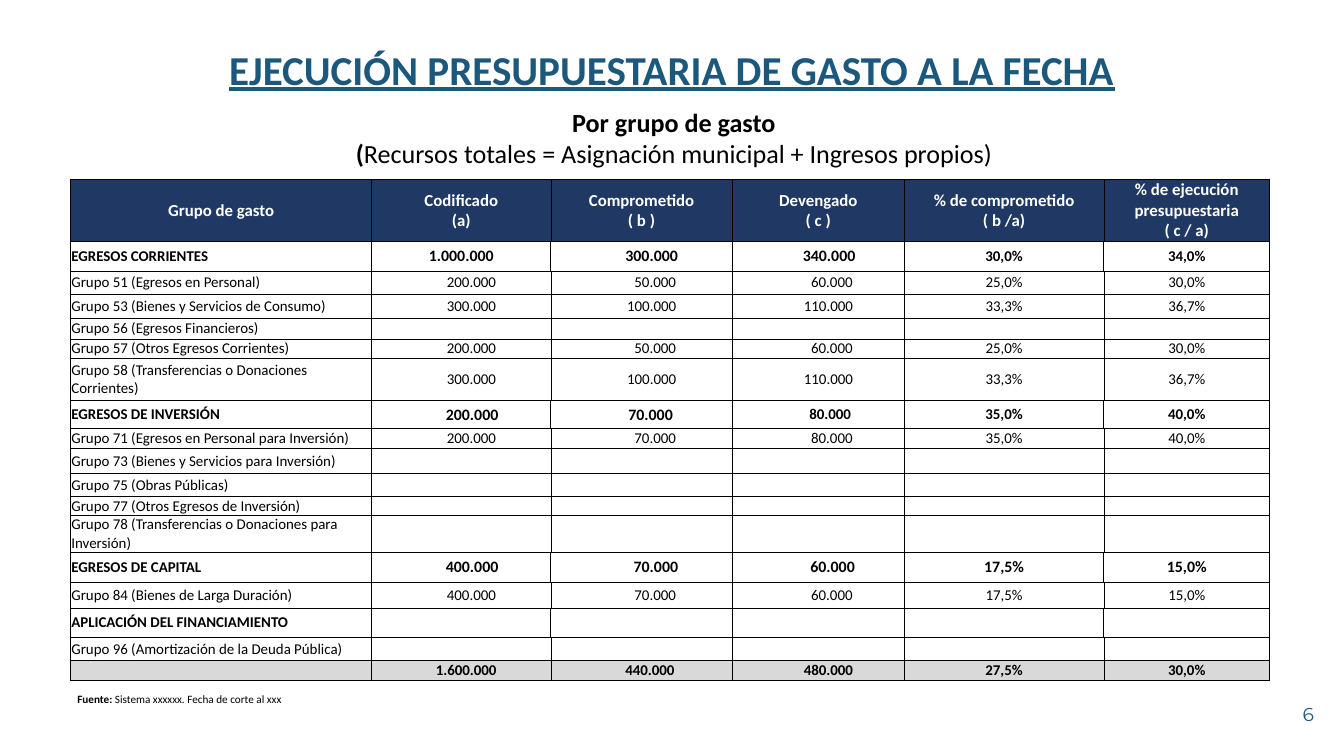
from dataclasses import dataclass

from lxml.etree import SubElement
from pptx import Presentation
from pptx.dml.color import RGBColor
from pptx.enum.text import MSO_ANCHOR, PP_ALIGN
from pptx.oxml.ns import qn
from pptx.util import Emu, Pt

PX = 9525
NAVY = RGBColor(0x1F, 0x38, 0x64)
BLUE = RGBColor(0x1B, 0x58, 0x7C)
GRAY = RGBColor(0xD9, 0xD9, 0xD9)
BLACK = RGBColor(0, 0, 0)
WHITE = RGBColor(0xFF, 0xFF, 0xFF)
INDENT_BY_LENGTH = {7: 29, 6: 39}


@dataclass
class Style:
    size: int
    color: RGBColor = BLACK
    bold: bool = False
    font: str = "Calibri"
    underline: bool = False


@dataclass
class BudgetRow:
    height: int
    label: str
    values: tuple = ("",) * 5
    kind: str = "group"
    sizes: tuple = (16,) * 5
    indents: tuple = ()


COLUMNS = (430, 256, 259, 246, 285, 237)
ROWS = (
    BudgetRow(89, "Grupo de gasto",
              ("Codificado\v(a)", "Comprometido\v( b )", "Devengado\v( c )",
               "% de comprometido\v( b /a)", "% de ejecución presupuestaria\v( c / a)"),
              "header", (18,) * 5),
    BudgetRow(42, "EGRESOS CORRIENTES", ("1.000.000", "300.000", "340.000", "30,0%", "34,0%"),
              "section", (17, 17, 17, 16, 16), (0, 29, 31)),
    BudgetRow(33, "Grupo 51 (Egresos en Personal)",
              ("200.000", "50.000", "60.000", "25,0%", "30,0%")),
    BudgetRow(34, "Grupo 53 (Bienes y Servicios de Consumo)",
              ("300.000", "100.000", "110.000", "33,3%", "36,7%")),
    BudgetRow(30, "Grupo 56 (Egresos Financieros)"),
    BudgetRow(28, "Grupo 57 (Otros Egresos Corrientes)",
              ("200.000", "50.000", "60.000", "25,0%", "30,0%")),
    BudgetRow(60, "Grupo 58 (Transferencias o Donaciones Corrientes)",
              ("300.000", "100.000", "110.000", "33,3%", "36,7%")),
    BudgetRow(40, "EGRESOS DE INVERSIÓN", ("200.000", "70.000", "80.000", "35,0%", "40,0%"),
              "section", (17, 17, 16, 16, 16), (31, 26, 34)),
    BudgetRow(29, "Grupo 71 (Egresos en Personal para Inversión)",
              ("200.000", "70.000", "80.000", "35,0%", "40,0%")),
    BudgetRow(35, "Grupo 73 (Bienes y Servicios para Inversión)"),
    BudgetRow(33, "Grupo 75 (Obras Públicas)"),
    BudgetRow(27, "Grupo 77 (Otros Egresos de Inversión)"),
    BudgetRow(53, "Grupo 78 (Transferencias o Donaciones para Inversión)"),
    BudgetRow(43, "EGRESOS DE CAPITAL", ("400.000", "70.000", "60.000", "17,5%", "15,0%"),
              "section", (17,) * 5, (31, 41, 41)),
    BudgetRow(37, "Grupo 84 (Bienes de Larga Duración)",
              ("400.000", "70.000", "60.000", "17,5%", "15,0%")),
    BudgetRow(41, "APLICACIÓN DEL FINANCIAMIENTO", kind="section"),
    BudgetRow(34, "Grupo 96 (Amortización de la Deuda Pública)"),
    BudgetRow(28, "", ("1.600.000", "440.000", "480.000", "27,5%", "30,0%"),
              "total", indents=(14, 24, 29)),
)
FILLS = {"header": NAVY, "total": GRAY}


def px(length: int) -> Emu:
    return Emu(length * PX)


def format_span(span, style: Style) -> None:
    font = span.font
    font.name = style.font
    font.size = Pt(style.size)
    font.bold = style.bold
    font.color.rgb = style.color
    if style.underline:
        font.underline = True


def add_text(slide, place: tuple, lines: tuple, align=PP_ALIGN.LEFT):
    box = slide.shapes.add_textbox(*map(px, place))
    frame = box.text_frame
    frame.word_wrap = True
    for number, line in enumerate(lines):
        para = frame.add_paragraph() if number else frame.paragraphs[0]
        para.alignment = align
        for text, style in line:
            span = para.add_run()
            span.text = text
            format_span(span, style)
    return box


def center_in_margins(frame) -> None:
    frame.vertical_anchor = MSO_ANCHOR.MIDDLE
    frame.margin_left = frame.margin_right = px(17)
    frame.margin_top = frame.margin_bottom = px(9)


def set_borders(cell, kind: str, column: int) -> None:
    section = kind == "section"
    widths = {
        "L": 1 if column == 1 or (section and column) else 0.5,
        "R": 1 if section or column in (0, 5) else 0.5,
        "T": 0.5,
        "B": 0.5,
    }
    properties = cell._tc.get_or_add_tcPr()
    for side, width in widths.items():
        line = SubElement(properties, qn(f"a:ln{side}"), w=str(Pt(width)))
        fill = SubElement(line, qn("a:solidFill"))
        SubElement(fill, qn("a:srgbClr"), val=str(BLACK))


def fill_cell(cell, row: BudgetRow, column: int) -> None:
    text = row.values[column - 1] if column else row.label
    size = row.sizes[column - 1] if column and text else 16
    if row.kind == "header":
        size = 18
    indent = 0
    if 1 <= column <= 3 and row.kind != "header":
        indent = row.indents[column - 1] if row.indents else INDENT_BY_LENGTH.get(len(text), 0)
    cell.margin_left = px(1 + indent)
    cell.margin_right = cell.margin_top = px(1)
    cell.margin_bottom = 0
    cell.vertical_anchor = MSO_ANCHOR.MIDDLE
    set_borders(cell, row.kind, column)
    if row.kind in FILLS:
        cell.fill.solid()
        cell.fill.fore_color.rgb = FILLS[row.kind]
    else:
        cell.fill.background()
    para = cell.text_frame.paragraphs[0]
    if not text:
        SubElement(para._p, qn("a:endParaRPr"), sz=str(size * 100))
        return
    para.text = text
    para.alignment = PP_ALIGN.CENTER if column or row.kind == "header" else PP_ALIGN.LEFT
    color = WHITE if row.kind == "header" else BLACK
    for span in para.runs:
        format_span(span, Style(size, color, row.kind != "group"))


def add_budget_table(slide) -> None:
    total_height = sum(row.height for row in ROWS)
    frame = slide.shapes.add_table(len(ROWS), len(COLUMNS), px(101), px(256),
                                   px(sum(COLUMNS)), px(total_height))
    table = frame.table
    table.first_row = False
    table.horz_banding = False
    for column, width in enumerate(COLUMNS):
        table.columns[column].width = px(width)
    for number, row in enumerate(ROWS):
        table.rows[number].height = px(row.height)
        for column in range(len(COLUMNS)):
            fill_cell(table.cell(number, column), row, column)


def add_title(slide, text: str) -> None:
    title = slide.shapes.title
    title.left, title.top, title.width, title.height = map(px, (48, 37, 1824, 122))
    title.text_frame.text = text
    center_in_margins(title.text_frame)
    para = title.text_frame.paragraphs[0]
    para.alignment = PP_ALIGN.CENTER
    format_span(para.runs[0], Style(44, BLUE, True, underline=True))


def main() -> None:
    deck = Presentation()
    deck.slide_width, deck.slide_height = px(1920), px(1080)
    page = deck.slides.add_slide(deck.slide_layouts[5])
    add_title(page, "EJECUCIÓN PRESUPUESTARIA DE GASTO A LA FECHA")
    number = add_text(page, (1824, 991, 90, 58),
                      ((("6", Style(20, BLUE, font="Montserrat")),),), PP_ALIGN.CENTER)
    center_in_margins(number.text_frame)
    add_budget_table(page)
    add_text(page, (272, 147, 1381, 100), (
        (("Por grupo de gasto", Style(28, bold=True)),),
        (("(", Style(28, bold=True)),
         ("Recursos totales = Asignación municipal + Ingresos propios)", Style(28))),
    ), PP_ALIGN.CENTER)
    add_text(page, (101, 984, 1665, 29), (
        (("Fuente:", Style(12, bold=True)),
         (" Sistema xxxxxx. Fecha de corte al xxx", Style(12))),
    ))
    deck.save("out.pptx")


if __name__ == "__main__":
    main()
